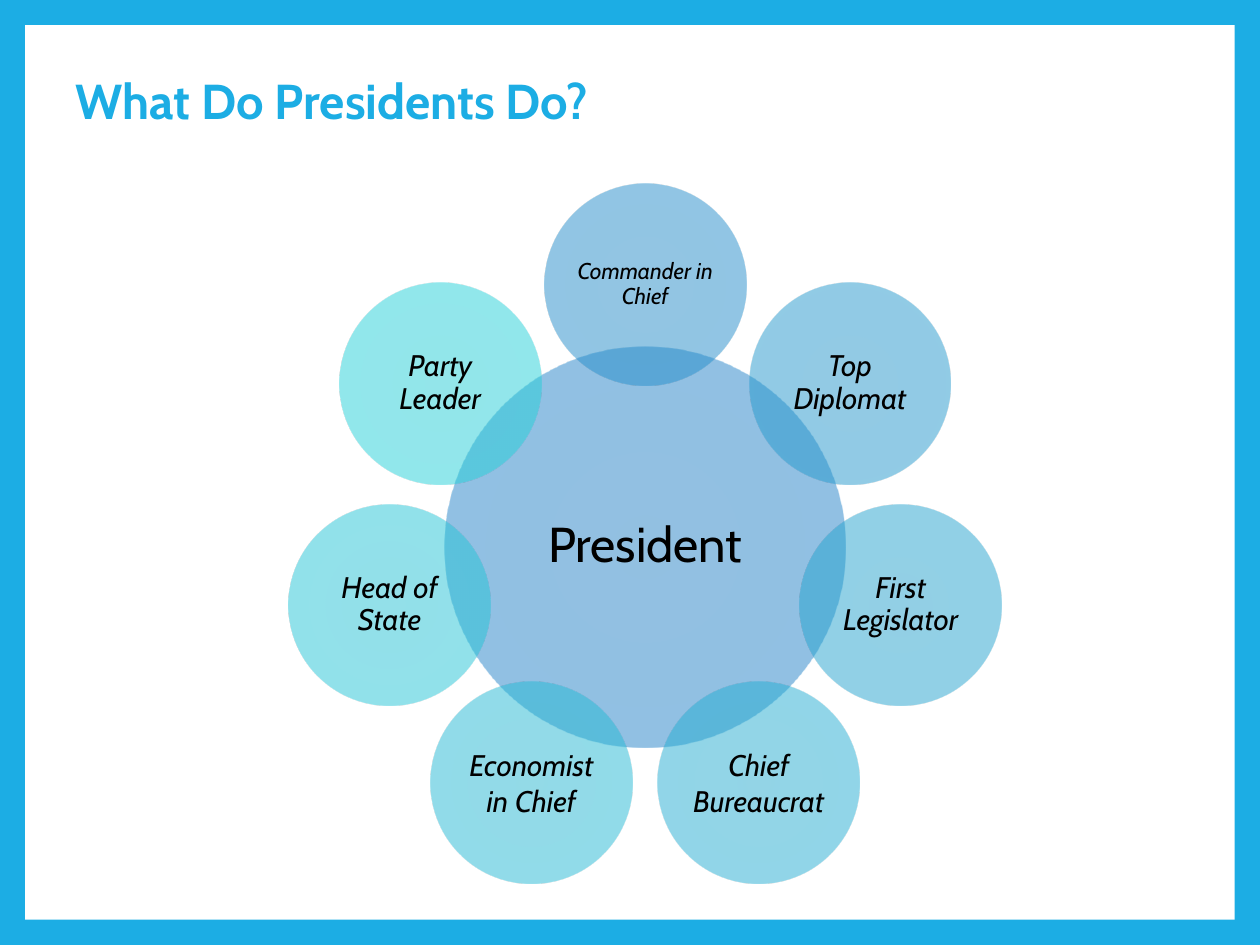
from dataclasses import dataclass
from math import cos, pi, sin

from lxml import etree
from pptx import Presentation
from pptx.dml.color import RGBColor
from pptx.enum.shapes import MSO_SHAPE
from pptx.enum.text import MSO_ANCHOR, PP_ALIGN
from pptx.oxml.ns import qn
from pptx.util import Inches, Pt

RECT, OVAL = MSO_SHAPE.RECTANGLE, MSO_SHAPE.OVAL
MIDDLE = MSO_ANCHOR.MIDDLE
LEFT, CENTER = PP_ALIGN.LEFT, PP_ALIGN.CENTER
BLANK = 6


@dataclass(frozen=True)
class Theme:
    font: str = "Cabin"
    accent: str = "1CADE4"
    paper: str = "FFFFFF"
    ink: str = "000000"
    title: int = 28
    hub: int = 28
    role: int = 17
    small: int = 13
    alpha: int = 50


class Deck:
    def __init__(self, prs, theme):
        self.theme = theme
        self.s = prs.slides.add_slide(prs.slide_layouts[BLANK])

    def background(self, color):
        fill = self.s.background.fill
        fill.solid()
        fill.fore_color.rgb = RGBColor.from_string(color)

    def panel(self, x, y, w, h):
        sp = self.s.shapes.add_shape(RECT, *map(Inches, (x, y, w, h)))
        sp.shadow.inherit = False
        sp.fill.solid()
        sp.fill.fore_color.rgb = RGBColor.from_string(self.theme.paper)
        sp.line.fill.background()

    def label(self, sp, text, size, color, align, spacing=0.9, inset=0.1, **style):
        tf = sp.text_frame
        frame = {"word_wrap": True, "vertical_anchor": MIDDLE}
        for side in ("left", "top", "right", "bottom"):
            frame[f"margin_{side}"] = Inches(inset)
        p = tf.paragraphs[0]
        r = p.add_run()
        r.text = text
        r.font.color.rgb = RGBColor.from_string(color)
        font = {"name": self.theme.font, "size": Pt(size), **style}
        paragraph = {"alignment": align, "line_spacing": spacing}
        for target, values in ((tf, frame), (p, paragraph), (r.font, font)):
            for name, value in values.items():
                setattr(target, name, value)

    def title(self, text, x, y, w, h):
        sp = self.s.shapes.add_textbox(*map(Inches, (x, y, w, h)))
        self.label(sp, text, self.theme.title, self.theme.accent, LEFT, bold=True)

    def circle(self, cx, cy, d, stops, text, size, **style):
        box = (cx - d / 2, cy - d / 2, d, d)
        sp = self.s.shapes.add_shape(OVAL, *map(Inches, box))
        sp.shadow.inherit = False
        sp.line.fill.background()
        self.radial(sp, stops)
        self.label(sp, text, size, self.theme.ink, CENTER, inset=0.01, **style)

    def radial(self, sp, stops):
        sp.fill.gradient()
        grad = sp._element.spPr.find(qn("a:gradFill"))
        for child in list(grad):
            grad.remove(child)
        gs_list = etree.SubElement(grad, qn("a:gsLst"))
        for pos, color in zip((0, 90, 100), stops.split()):
            gs = etree.SubElement(gs_list, qn("a:gs"), pos=str(pos * 1000))
            clr = etree.SubElement(gs, qn("a:srgbClr"), val=color)
            etree.SubElement(clr, qn("a:alpha"), val=str(self.theme.alpha * 1000))
        circle = etree.SubElement(grad, qn("a:path"), path="circle")
        edges = dict.fromkeys("ltrb", "100000")
        etree.SubElement(circle, qn("a:fillToRect"), **edges)


def main():
    theme = Theme()
    prs = Presentation()
    prs.slide_width, prs.slide_height = Inches(10), Inches(7.5)

    deck = Deck(prs, theme)
    deck.background(theme.accent)
    deck.panel(0.2, 0.2, 9.6, 7.1)
    deck.title("What Do Presidents Do?", 0.5, 0.5, 9, 0.65)

    cx, cy, ring = 5.12, 4.34, 2.08
    deck.circle(cx, cy, 3.18, "2683C6 2284CA 1479C2", "President", theme.hub)

    roles = [
        ("Commander in Chief", theme.small, 0.9, "268DC8 228ECC 1484C5"),
        ("Top Diplomat", theme.role, 0.9, "2697CB 2299CF 148FC7"),
        ("First Legislator", theme.role, 0.9, "26A2CD 22A4D1 149AC9"),
        ("Chief Bureaucrat", theme.role, 1.0, "27ACD0 22AFD4 14A5CC"),
        ("Economist in Chief", theme.role, 1.0, "27B7D2 22BAD6 14B1CE"),
        ("Head of State", theme.role, 0.9, "27C3D5 23C6D9 14BDD1"),
        ("Party Leader", theme.role, 0.9, "27CED7 23D2DB 13C9D3"),
    ]
    for i, (role, size, spacing, stops) in enumerate(roles):
        angle = 2 * pi * i / len(roles)
        x, y = cx + ring * sin(angle), cy - ring * cos(angle)
        deck.circle(x, y, 1.6, stops, role, size, spacing=spacing, italic=True)

    prs.save("out.pptx")


if __name__ == "__main__":
    main()
